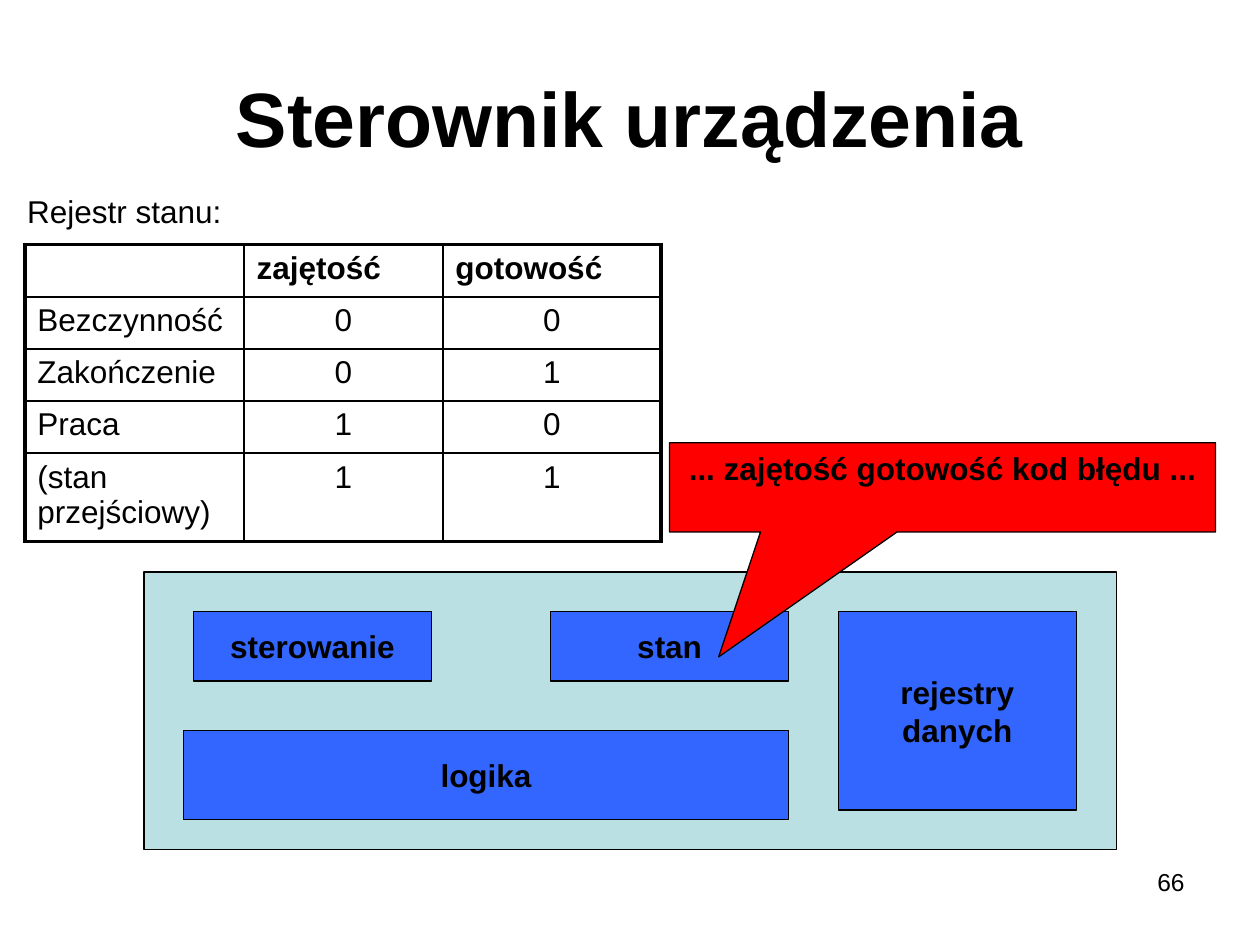
from lxml import etree
from pptx import Presentation
from pptx.dml.color import RGBColor
from pptx.enum.shapes import MSO_SHAPE
from pptx.enum.text import MSO_ANCHOR, PP_ALIGN
from pptx.oxml.ns import qn
from pptx.util import Pt

LEFT, CENTER, RIGHT = PP_ALIGN.LEFT, PP_ALIGN.CENTER, PP_ALIGN.RIGHT
TOP, MIDDLE = MSO_ANCHOR.TOP, MSO_ANCHOR.MIDDLE
RECTANGLE, CALLOUT = MSO_SHAPE.RECTANGLE, MSO_SHAPE.RECTANGULAR_CALLOUT
COLORS = {"ink": "000000", "panel": "BBE0E3", "block": "3366FF", "callout": "FF0000"}


def write(frame, text, size=18, bold=False, align=LEFT, anchor=TOP, wrap=True):
    frame.word_wrap = wrap
    frame.vertical_anchor = anchor
    frame.text = text
    for para in frame.paragraphs:
        para.alignment = align
        for span in para.runs:
            span.font.name = "Arial"
            span.font.size = Pt(size)
            span.font.bold = bold
            span.font.color.rgb = RGBColor.from_string(COLORS["ink"])


def set_border(cell, widths):
    """Draw the left, right, top and bottom cell edges with the given widths."""
    properties = cell._tc.get_or_add_tcPr()
    for index, (side, width) in enumerate(zip("LRTB", widths)):
        line = etree.Element(qn(f"a:ln{side}"), w=str(Pt(width)))
        fill = etree.SubElement(line, qn("a:solidFill"))
        etree.SubElement(fill, qn("a:srgbClr"), val=COLORS["ink"])
        properties.insert(index, line)


deck = Presentation()
deck.slide_width, deck.slide_height = Pt(720), Pt(540)
page = deck.slides.add_slide(deck.slide_layouts[5])

title = page.shapes.title
title.left, title.top, title.width, title.height = Pt(36), Pt(21.6), Pt(648), Pt(90)
write(title.text_frame, "Sterownik urządzenia", size=44, bold=True,
      align=CENTER, anchor=MIDDLE)

page_number = page.shapes.add_textbox(Pt(516), Pt(492), Pt(168), Pt(37.5))
write(page_number.text_frame, "66", size=14, align=RIGHT)

# Device controller diagram, from back to front
blocks = [
    (RECTANGLE, "panel", "", 82.2, 326.8, 555.8, 158.7),
    (RECTANGLE, "block", "sterowanie", 110.5, 349.4, 136.1, 39.7),
    (RECTANGLE, "block", "stan", 314.6, 349.4, 136.1, 39.7),
    (RECTANGLE, "block", "rejestry\ndanych", 479, 349.4, 136.1, 113.4),
    (RECTANGLE, "block", "logika", 104.8, 417.4, 345.9, 51),
    (CALLOUT, "callout", "... zajętość gotowość kod błędu ...", 382.6, 253, 312, 51),
]
for kind, color, text, left, top, width, height in blocks:
    box = page.shapes.add_shape(kind, Pt(left), Pt(top), Pt(width), Pt(height))
    box.shadow.inherit = False
    box.fill.solid()
    box.fill.fore_color.rgb = RGBColor.from_string(COLORS[color])
    box.line.color.rgb = RGBColor.from_string(COLORS["ink"])
    box.line.width = Pt(0.75)
    is_callout = kind == CALLOUT
    if is_callout:
        box.adjustments[0], box.adjustments[1] = -0.41, 1.9
    if text:
        write(box.text_frame, text, bold=True, align=CENTER,
              anchor=TOP if is_callout else MIDDLE, wrap=is_callout)

# Status register table
rows = [
    ("", "zajętość", "gotowość"),
    ("Bezczynność", "0", "0"),
    ("Zakończenie", "0", "1"),
    ("Praca", "1", "0"),
    ("(stan przejściowy)", "1", "1"),
]
column_widths = [125.3, 113.6, 124.7]
row_heights = [29.8, 29.8, 29.8, 29.8, 50.4]
THIN, THICK = 1, 2.25
last_row, last_column = len(rows) - 1, len(column_widths) - 1
table = page.shapes.add_table(len(rows), len(column_widths), Pt(14.2), Pt(139.8),
                              Pt(sum(column_widths)), Pt(sum(row_heights))).table
for column, width in zip(table.columns, column_widths):
    column.width = Pt(width)
for r, (values, height) in enumerate(zip(rows, row_heights)):
    table.rows[r].height = Pt(height)
    for c, value in enumerate(values):
        cell = table.cell(r, c)
        cell.fill.background()
        on_edge = (c == 0, c == last_column, r == 0, r == last_row)
        set_border(cell, [THICK if edge else THIN for edge in on_edge])
        if value:
            write(cell.text_frame, value, bold=r == 0,
                  align=CENTER if r and c else LEFT)

caption = page.shapes.add_textbox(Pt(8.5), Pt(106), Pt(125.3), Pt(28.8))
write(caption.text_frame, "Rejestr stanu:", wrap=False)

deck.save("out.pptx")
